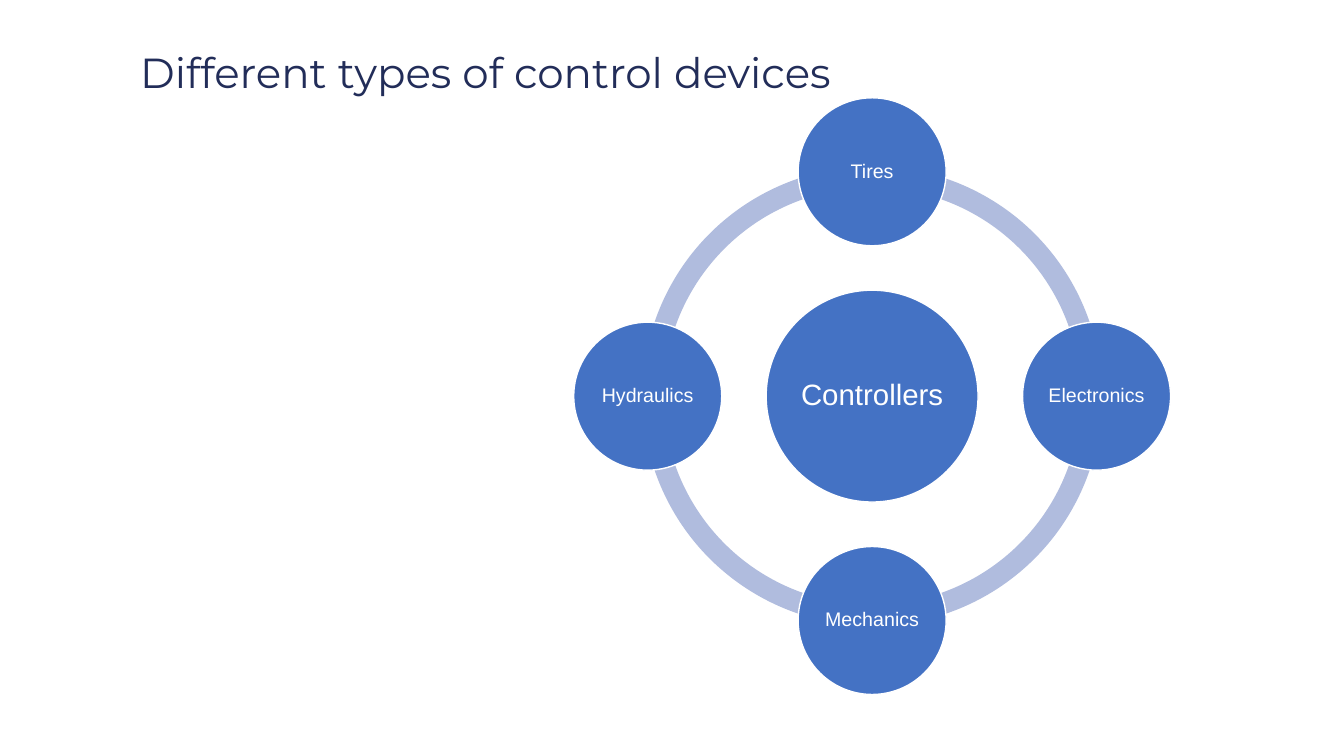
from math import cos, pi, sin

from pptx import Presentation
from pptx.dml.color import RGBColor
from pptx.enum.shapes import MSO_SHAPE
from pptx.enum.text import MSO_ANCHOR, PP_ALIGN
from pptx.util import Inches, Pt

COLORS = {"title": "222D59", "circle": "4472C4", "ring": "B0BCDE", "white": "FFFFFF"}
TITLE_BOX = (1.29, 0.02, 8.86, 1.45)
CYCLE_BOX = (5.69, 0.97, 5.92, 5.92)
DEVICES = ["Tires", "Electronics", "Mechanics", "Hydraulics"]
QUARTER_TURN = 54


def color(name):
    return RGBColor.from_string(COLORS[name])


def style_text(paragraph, font_name, size, color_name):
    paragraph.line_spacing = 0.9
    font = paragraph.runs[0].font
    font.name = font_name
    font.size = Pt(size)
    font.color.rgb = color(color_name)


def add_title(slide, box, text):
    title = slide.shapes.title
    title.left, title.top, title.width, title.height = map(Inches, box)
    text_frame = title.text_frame
    text_frame.text = text
    text_frame.word_wrap = True
    text_frame.vertical_anchor = MSO_ANCHOR.MIDDLE
    paragraph = text_frame.paragraphs[0]
    paragraph.alignment = PP_ALIGN.LEFT
    style_text(paragraph, "Montserrat", 30, "title")


def add_centred_shape(slide, kind, center, diameter, fill):
    left, top = (Inches(value - diameter / 2) for value in center)
    shape = slide.shapes.add_shape(kind, left, top, Inches(diameter), Inches(diameter))
    shape.shadow.inherit = False
    shape.fill.solid()
    shape.fill.fore_color.rgb = color(fill)
    return shape


def add_ring_quarter(slide, center, diameter, quarter):
    arc = add_centred_shape(slide, MSO_SHAPE.BLOCK_ARC, center, diameter, "ring")
    arc.line.fill.background()
    arc.adjustments[0] = quarter * QUARTER_TURN
    arc.adjustments[1] = (quarter + 1) % 4 * QUARTER_TURN
    arc.adjustments[2] = 0.046


def add_circle(slide, center, diameter, text, size):
    circle = add_centred_shape(slide, MSO_SHAPE.OVAL, center, diameter, "circle")
    circle.line.color.rgb = color("white")
    circle.line.width = Pt(1)
    text_frame = circle.text_frame
    text_frame.text = text
    text_frame.word_wrap = False
    text_frame.vertical_anchor = MSO_ANCHOR.MIDDLE
    text_frame.margin_left = text_frame.margin_right = Inches(0.02)
    text_frame.margin_top = text_frame.margin_bottom = Inches(0.02)
    paragraph = text_frame.paragraphs[0]
    paragraph.alignment = PP_ALIGN.CENTER
    style_text(paragraph, "Arial", size, "white")


def add_cycle(slide, box, hub, devices):
    left, top, width, height = box
    center_x, center_y = left + width / 2, top + height / 2
    device_diameter = width * 0.248
    orbit = (width - device_diameter) / 2
    for quarter in (2, 1, 0, 3):
        add_ring_quarter(slide, (center_x, center_y), width * 0.77, quarter)
    add_circle(slide, (center_x, center_y), width * 0.355, hub, 21)
    for index, device in enumerate(devices):
        angle = 2 * pi * index / len(devices) - pi / 2
        center = (center_x + orbit * cos(angle), center_y + orbit * sin(angle))
        add_circle(slide, center, device_diameter, device, 14)


def main():
    presentation = Presentation()
    presentation.slide_width = Inches(13.33)
    presentation.slide_height = Inches(7.5)
    slide = presentation.slides.add_slide(presentation.slide_layouts[5])
    add_title(slide, TITLE_BOX, "Different types of control devices")
    add_cycle(slide, CYCLE_BOX, "Controllers", DEVICES)
    presentation.save("out.pptx")


if __name__ == "__main__":
    main()
